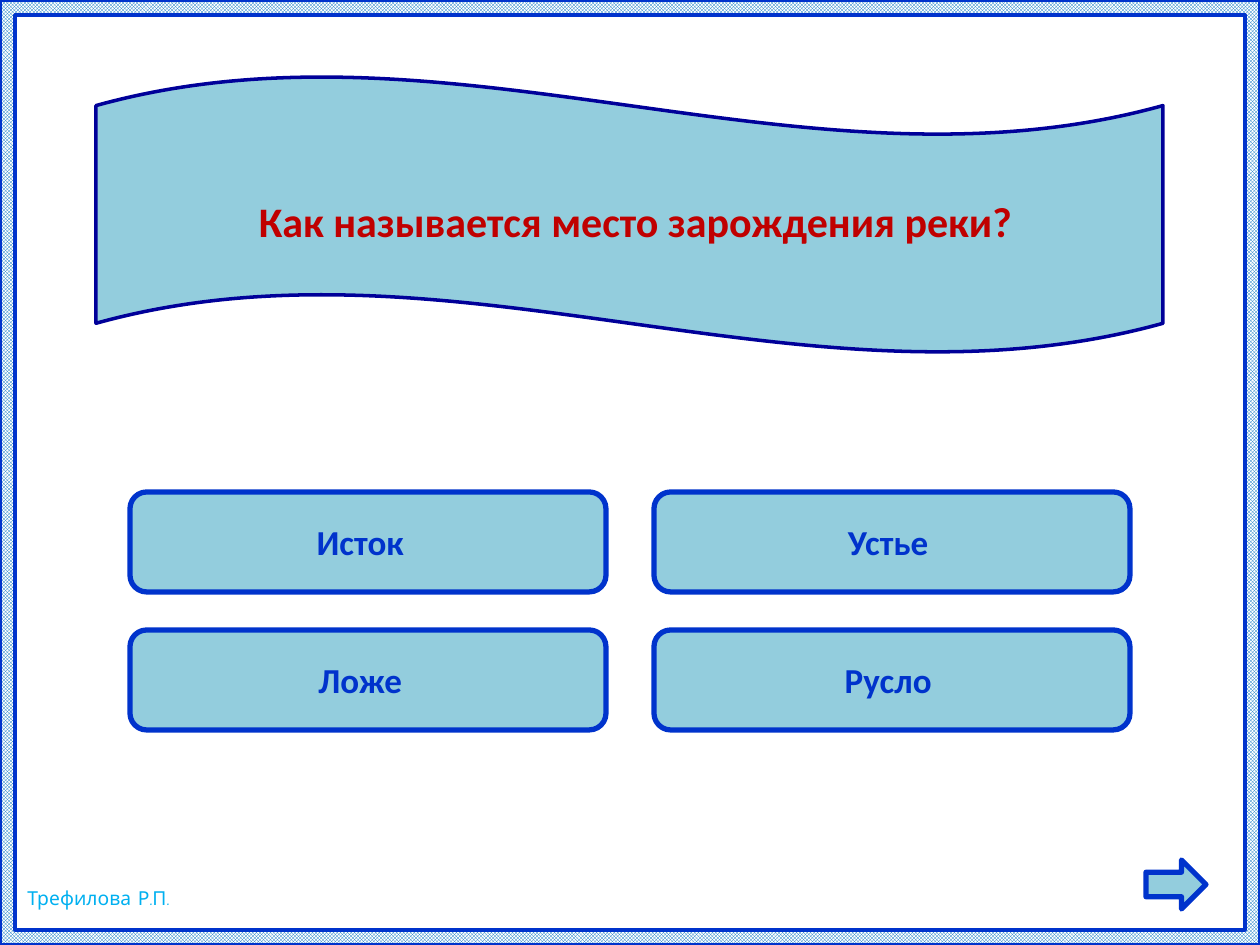
from pptx import Presentation
from pptx.dml.color import RGBColor
from pptx.enum.dml import MSO_PATTERN
from pptx.enum.shapes import MSO_SHAPE
from pptx.enum.text import MSO_ANCHOR, PP_ALIGN
from pptx.util import Emu, Pt

EMU_PER_PX = 914400 / 126
COLORS = {
    "fill": "93CDDD", "blue": "0033CC", "navy": "000099", "red": "C00000",
    "check": "0070C0", "white": "FFFFFF", "author": "00B0F0",
}


def px(n):
    return Emu(round(n * EMU_PER_PX))


def rgb(name):
    return RGBColor.from_string(COLORS[name])


def add_box(slide, kind, box, line, width, adjustments=()):
    """Preset shape with the slide's light blue fill and a coloured outline."""
    s = slide.shapes.add_shape(kind, *map(px, box))
    s.shadow.inherit = False
    for i, value in enumerate(adjustments):
        s.adjustments[i] = value
    s.fill.solid()
    s.fill.fore_color.rgb = rgb("fill")
    s.line.color.rgb = rgb(line)
    s.line.width = Pt(width)
    return s


def write(s, text, size, color, font="Calibri", bold=True, align=PP_ALIGN.CENTER):
    tf = s.text_frame
    tf.text = text
    tf.vertical_anchor = MSO_ANCHOR.MIDDLE
    p = tf.paragraphs[0]
    p.alignment = align
    r = p.runs[0]
    r.font.name = font
    r.font.size = Pt(size)
    r.font.bold = bold
    r.font.color.rgb = rgb(color)


def add_frame(slide):
    s = add_box(slide, MSO_SHAPE.FRAME, (0, 0, 1260, 945), "blue", 2, [0.016])
    s.fill.patterned()
    s.fill.pattern = MSO_PATTERN.SMALL_CHECKER_BOARD
    s.fill.fore_color.rgb = rgb("check")
    s.fill.back_color.rgb = rgb("white")


def add_author(slide, text):
    s = slide.shapes.add_textbox(px(15), px(879), px(179), px(37))
    s.text_frame.word_wrap = True
    write(s, text, 11, "author", "Comic Neue", False, PP_ALIGN.LEFT)


def add_question(slide, text):
    add_box(slide, MSO_SHAPE.WAVE, (96, 76, 1067, 277), "navy", 2, [0.107, 0])
    # The title lies on top of the wave
    title = slide.shapes.title
    title.left, title.top, title.width, title.height = map(px, (102, 141, 1067, 160))
    write(title, text, 24, "red")
    tree = slide.shapes._spTree
    tree.remove(title._element)
    tree.append(title._element)


def add_answers(slide, rows):
    left, top, step_x, step_y = 130, 492, 524, 138
    insets = (28, 20)  # right inset of each column
    for i, row in enumerate(rows):
        for j, text in enumerate(row):
            box = (left + j * step_x, top + i * step_y, 476, 100)
            s = add_box(slide, MSO_SHAPE.ROUNDED_RECTANGLE, box, "blue", 3)
            s.text_frame.margin_right = px(insets[j])
            write(s, text, 20, "blue")


def main():
    prs = Presentation()
    prs.slide_width, prs.slide_height = px(1260), px(945)
    slide = prs.slides.add_slide(prs.slide_layouts[5])

    # Border and author
    add_frame(slide)
    add_author(slide, "Трефилова Р.П.")

    # Quiz
    add_question(slide, "Как называется место зарождения реки?")
    add_answers(slide, [("Исток", "Устье"), ("Ложе", "Русло")])

    # Next arrow
    add_box(slide, MSO_SHAPE.RIGHT_ARROW, (1146, 860, 60, 49), "blue", 3)

    prs.save("out.pptx")


if __name__ == "__main__":
    main()
